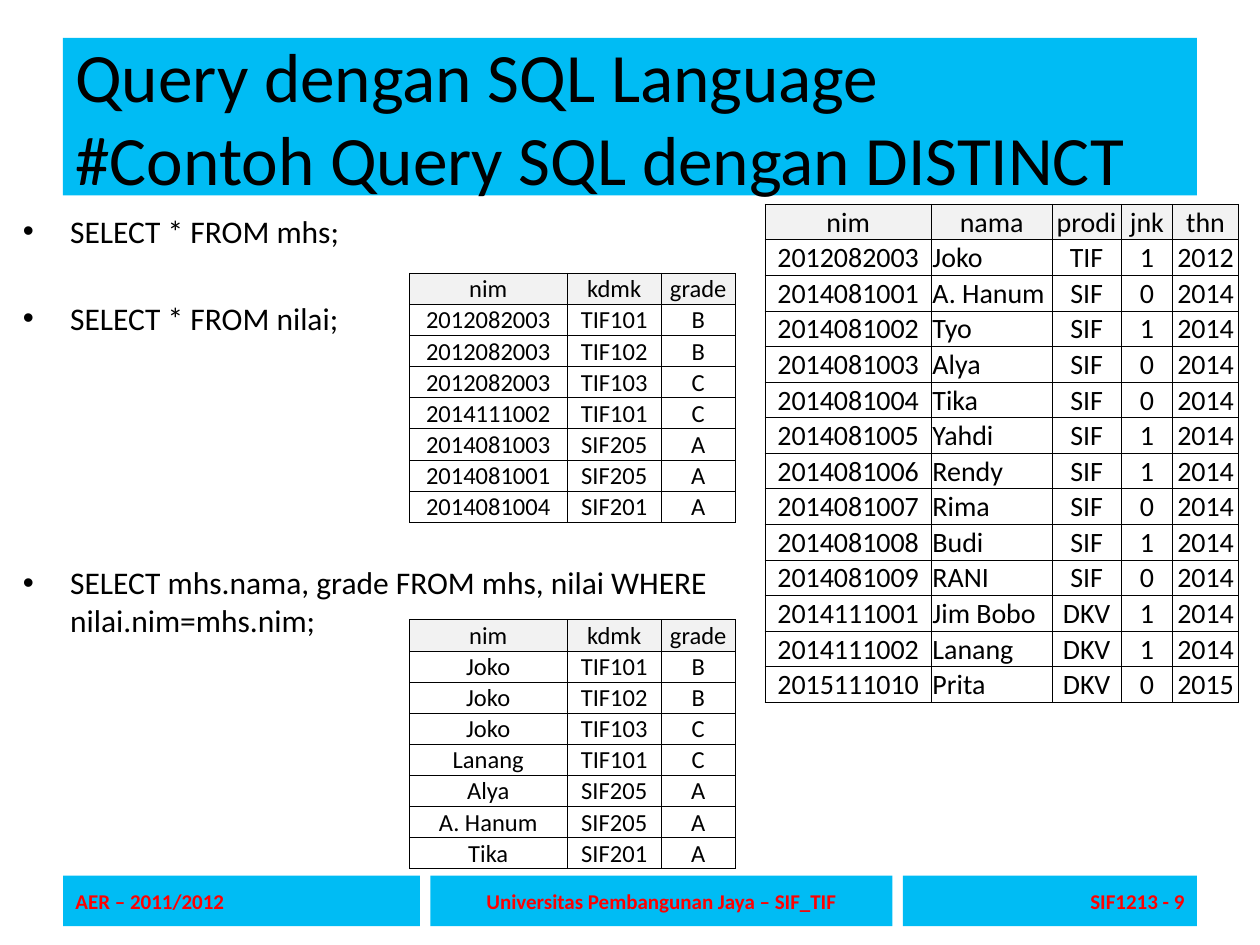
from lxml.etree import SubElement
from pptx import Presentation
from pptx.dml.color import RGBColor
from pptx.enum.shapes import MSO_SHAPE
from pptx.enum.text import MSO_ANCHOR as ANCHOR, PP_ALIGN as ALIGN
from pptx.oxml.ns import qn
from pptx.util import Pt

FONT, BLACK, RED, CYAN, GRAY = "Calibri", "000000", "FF0000", "00BCF4", "F2F2F2"

TITLE = "Query dengan SQL Language\v#Contoh Query SQL dengan DISTINCT"
# query, space before in points
QUERIES = [
    ("SELECT * FROM mhs;", 0),
    ("SELECT * FROM nilai;", 28.3),
    ("SELECT mhs.nama, grade FROM mhs, nilai WHERE nilai.nim=mhs.nim;", 129.4),
]
# text, left, width, alignment
FOOTERS = [
    ("AER – 2011/2012", 36, 204, ALIGN.LEFT),
    ("Universitas Pembangunan Jaya – SIF_TIF", 246, 264, ALIGN.CENTER),
    ("SIF1213 - 9", 516, 168, ALIGN.RIGHT),
]
STUDENTS = [
    ("nim", "nama", "prodi", "jnk", "thn"),
    ("2012082003", "Joko", "TIF", "1", "2012"),
    ("2014081001", "A. Hanum", "SIF", "0", "2014"),
    ("2014081002", "Tyo", "SIF", "1", "2014"),
    ("2014081003", "Alya", "SIF", "0", "2014"),
    ("2014081004", "Tika", "SIF", "0", "2014"),
    ("2014081005", "Yahdi", "SIF", "1", "2014"),
    ("2014081006", "Rendy", "SIF", "1", "2014"),
    ("2014081007", "Rima", "SIF", "0", "2014"),
    ("2014081008", "Budi", "SIF", "1", "2014"),
    ("2014081009", "RANI", "SIF", "0", "2014"),
    ("2014111001", "Jim Bobo", "DKV", "1", "2014"),
    ("2014111002", "Lanang", "DKV", "1", "2014"),
    ("2015111010", "Prita", "DKV", "0", "2015"),
]
GRADE_HEADER = ("nim", "kdmk", "grade")
# nim, name, course, grade
GRADES = [
    ("2012082003", "Joko", "TIF101", "B"),
    ("2012082003", "Joko", "TIF102", "B"),
    ("2012082003", "Joko", "TIF103", "C"),
    ("2014111002", "Lanang", "TIF101", "C"),
    ("2014081003", "Alya", "SIF205", "A"),
    ("2014081001", "A. Hanum", "SIF205", "A"),
    ("2014081004", "Tika", "SIF201", "A"),
]
BY_NIM = [GRADE_HEADER] + [(nim, course, grade) for nim, _, course, grade in GRADES]
BY_NAME = [GRADE_HEADER] + [(name, course, grade) for _, name, course, grade in GRADES]
GRADE_FORMAT = dict(widths=(90, 54, 42), row_height=17.8, size=14, anchor=ANCHOR.MIDDLE)
STUDENT_FORMAT = dict(widths=(95, 69, 39.5, 29.5, 37.5), row_height=20.33, size=16,
                      anchor=ANCHOR.BOTTOM, left_columns=(1,))


def rgb(value):
    return RGBColor.from_string(value)


def set_all(obj, **values):
    for name, value in values.items():
        setattr(obj, name, value)


def write(p, text, size, color=BLACK, align=ALIGN.LEFT, bold=False):
    p.text = text
    p.alignment = align
    set_all(p.font, name=FONT, size=Pt(size), bold=bold)
    p.font.color.rgb = rgb(color)


def add_banner(slide, text, left, top, width, height, **style):
    sp = slide.shapes.add_shape(MSO_SHAPE.RECTANGLE, Pt(left), Pt(top), Pt(width), Pt(height))
    sp.shadow.inherit = False
    sp.fill.solid()
    sp.fill.fore_color.rgb = rgb(CYAN)
    sp.line.fill.background()
    set_all(sp.text_frame, word_wrap=True, vertical_anchor=ANCHOR.MIDDLE)
    write(sp.text_frame.paragraphs[0], text, **style)


def add_queries(slide):
    tf = slide.shapes.add_textbox(Pt(6), Pt(117.4), Pt(431), Pt(356)).text_frame
    tf.word_wrap = True
    for i, (query, gap) in enumerate(QUERIES):
        p = tf.add_paragraph() if i else tf.paragraphs[0]
        write(p, query, 18)
        p.space_before = Pt(gap)
        pPr = p._p.get_or_add_pPr()
        pPr.set("marL", str(Pt(27)))
        pPr.set("indent", str(Pt(-27)))
        bullet_font = pPr.makeelement(qn("a:buFont"), {"typeface": "Arial"})
        bullet = pPr.makeelement(qn("a:buChar"), {"char": "•"})
        pPr.find(qn("a:spcBef")).addnext(bullet_font)
        bullet_font.addnext(bullet)


def add_borders(cell):
    tcPr = cell._tc.get_or_add_tcPr()
    for side in "LRTB":
        ln = SubElement(tcPr, qn(f"a:ln{side}"), w=str(Pt(0.5)))
        SubElement(SubElement(ln, qn("a:solidFill")), qn("a:srgbClr"), val=BLACK)


def add_grid(slide, rows, left, top, widths, row_height, size, anchor, left_columns=()):
    table = slide.shapes.add_table(len(rows), len(widths), Pt(left), Pt(top),
                                   Pt(sum(widths)), Pt(row_height * len(rows))).table
    set_all(table, first_row=False, horz_banding=False)
    for column, width in zip(table.columns, widths):
        column.width = Pt(width)
    for r, values in enumerate(rows):
        table.rows[r].height = Pt(row_height)
        for c, value in enumerate(values):
            cell = table.cell(r, c)
            set_all(cell, margin_left=Pt(0.7), margin_right=Pt(0.7), margin_top=Pt(0.7),
                    margin_bottom=0, vertical_anchor=anchor if r else ANCHOR.BOTTOM)
            align = ALIGN.LEFT if r and c in left_columns else ALIGN.CENTER
            write(cell.text_frame.paragraphs[0], value, size, align=align)
            add_borders(cell)
            if r:
                cell.fill.background()
            else:
                cell.fill.solid()
                cell.fill.fore_color.rgb = rgb(GRAY)


def main():
    prs = Presentation()
    set_all(prs, slide_width=Pt(720), slide_height=Pt(540))
    slide = prs.slides.add_slide(prs.slide_layouts[6])
    add_banner(slide, TITLE, 36, 21.6, 648, 90, size=39.6)
    add_queries(slide)
    for text, left, width, align in FOOTERS:
        add_banner(slide, text, left, 500.4, width, 28.8,
                   size=12, color=RED, align=align, bold=True)
    add_grid(slide, STUDENTS, 437.2, 116.7, **STUDENT_FORMAT)
    for rows, top in ((BY_NIM, 156.2), (BY_NAME, 354.2)):
        add_grid(slide, rows, 234, top, **GRADE_FORMAT)
    prs.save("out.pptx")


if __name__ == "__main__":
    main()
